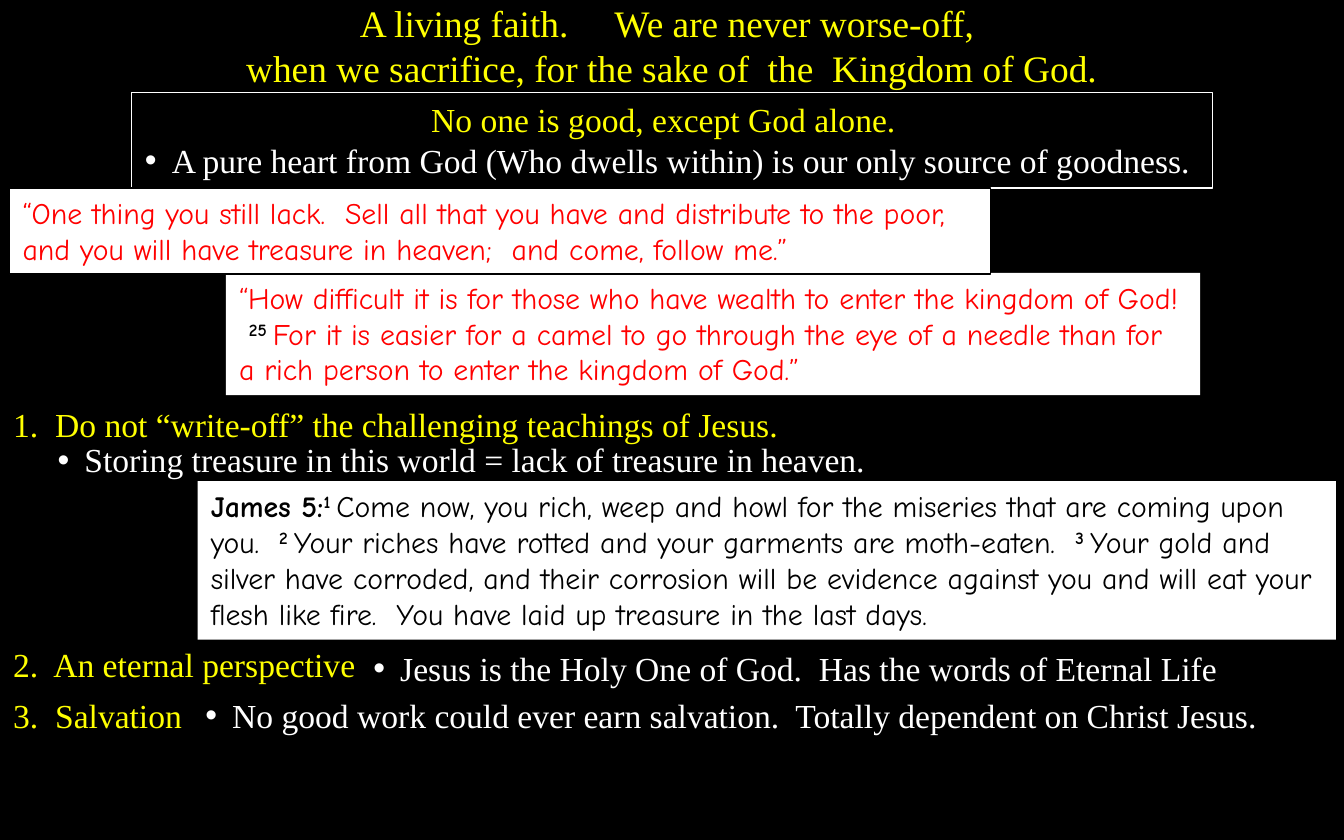
"""Build the slide on a living faith and the Kingdom of God."""
from pptx import Presentation
from pptx.dml.color import RGBColor
from pptx.enum.shapes import MSO_SHAPE
from pptx.enum.text import MSO_ANCHOR, PP_ALIGN
from pptx.oxml import parse_xml
from pptx.oxml.ns import nsdecls
from pptx.util import Inches, Pt

YELLOW, WHITE, RED, BLACK = "FFFF00", "FFFFFF", "FF0000", "000000"
rgb = RGBColor.from_string


def add_text(p, text, size=18, font="Times New Roman", color=YELLOW, bold=False,
             sup=False, align=PP_ALIGN.LEFT, bullet=False):
    p.alignment = align
    if bullet:
        pPr = p._p.get_or_add_pPr()
        pPr.set("marL", str(Inches(0.2)))
        pPr.set("indent", str(Inches(-0.2)))
        pPr.append(parse_xml(f'<a:buFont {nsdecls("a")} typeface="Arial"/>'))
        pPr.append(parse_xml(f'<a:buChar {nsdecls("a")} char="•"/>'))
    r = p.add_run()
    r.text = text
    r.font.size = Pt(size)
    r.font.name = font
    r.font.bold = bold
    r.font.color.rgb = rgb(color)
    if sup:
        r._r.get_or_add_rPr().set("baseline", "30000")


def add_box(s, x, y, w, h, fill=None, line=None, shape=True):
    at = [Inches(v) for v in (x, y, w, h)]
    if shape:
        sp = s.shapes.add_shape(MSO_SHAPE.RECTANGLE, *at)
        sp.shadow.inherit = False
    else:
        sp = s.shapes.add_textbox(*at)
    if fill:
        sp.fill.solid()
        sp.fill.fore_color.rgb = rgb(fill)
    else:
        sp.fill.background()
    if line:
        sp.line.color.rgb = rgb(line)
        sp.line.width = Pt(0.75)
    else:
        sp.line.fill.background()
    tf = sp.text_frame
    tf.word_wrap = True
    tf.vertical_anchor = MSO_ANCHOR.TOP
    return tf


prs = Presentation()
prs.slide_width, prs.slide_height = Inches(10), Inches(6.25)
s = prs.slides.add_slide(prs.slide_layouts[6])
s.background.fill.solid()
s.background.fill.fore_color.rgb = rgb(BLACK)

tf = add_box(s, 0, -0.05, 10, 0.77, shape=False)
add_text(tf.paragraphs[0], "A living faith.     We are never worse-off, ",
         size=20, align=PP_ALIGN.CENTER)
add_text(tf.add_paragraph(), "when we sacrifice, for the sake of  the  Kingdom of God.",
         size=20, align=PP_ALIGN.CENTER)

tf = add_box(s, 0.98, 0.69, 8.04, 0.71, line=WHITE)
add_text(tf.paragraphs[0], "No one is good, except God alone.  ", align=PP_ALIGN.CENTER)
add_text(tf.add_paragraph(),
         "A pure heart from God (Who dwells within) is our only source of goodness.",
         color=WHITE, bullet=True)

points = [
    (0, 2.96, 6.7, "1.  Do not “write-off” the challenging teachings of Jesus."),
    (0, 4.74, 2.86, "2.  An eternal perspective"),
    (0, 5.12, 2.86, "3.  Salvation"),
]
for x, y, w, text in points:
    add_text(add_box(s, x, y, w, 0.4, shape=False).paragraphs[0], text)

bullets = [
    (0.33, 3.22, 9.08, "Storing treasure in this world = lack of treasure in heaven."),
    (2.68, 4.77, 6.73, "Jesus is the Holy One of God.  Has the words of Eternal Life"),
    (1.43, 5.12, 8.57,
     "No good work could ever earn salvation.  Totally dependent on Christ Jesus."),
]
for x, y, w, text in bullets:
    add_text(add_box(s, x, y, w, 0.4, shape=False).paragraphs[0], text,
             color=WHITE, bullet=True)

verse = {"bold": True, "sup": True, "color": BLACK}
quotes = [
    (1.68, 2.03, 7.25, 0.91, None, RED, [
        ("“How difficult it is for those who have wealth to enter the kingdom of God!  ", {}),
        ("25 ", verse),
        ("For it is easier for a camel to go through the eye of a needle than for "
         "a rich person to enter the kingdom of God.”", {}),
    ]),
    (0.07, 1.4, 7.3, 0.64, BLACK, RED, [
        ("“One thing you still lack.  Sell all that you have and distribute to the poor, "
         "and you will have treasure in heaven;  and come, follow me.”", {}),
    ]),
    (1.47, 3.58, 8.47, 1.18, None, BLACK, [
        ("James 5:", {"bold": True}),
        ("1 ", verse),
        ("Come now, you rich, weep and howl for the miseries that are coming upon you.  ", {}),
        ("2 ", verse),
        ("Your riches have rotted and your garments are moth-eaten.  ", {}),
        ("3 ", verse),
        ("Your gold and silver have corroded, and their corrosion will be evidence "
         "against you and will eat your flesh like fire.  You have laid up treasure "
         "in the last days.", {}),
    ]),
]
for x, y, w, h, line, color, runs in quotes:
    tf = add_box(s, x, y, w, h, fill=WHITE, line=line)
    for text, fmt in runs:
        add_text(tf.paragraphs[0], text, **{"size": 16, "font": "Comic Neue", "color": color, **fmt})

prs.save("out.pptx")
